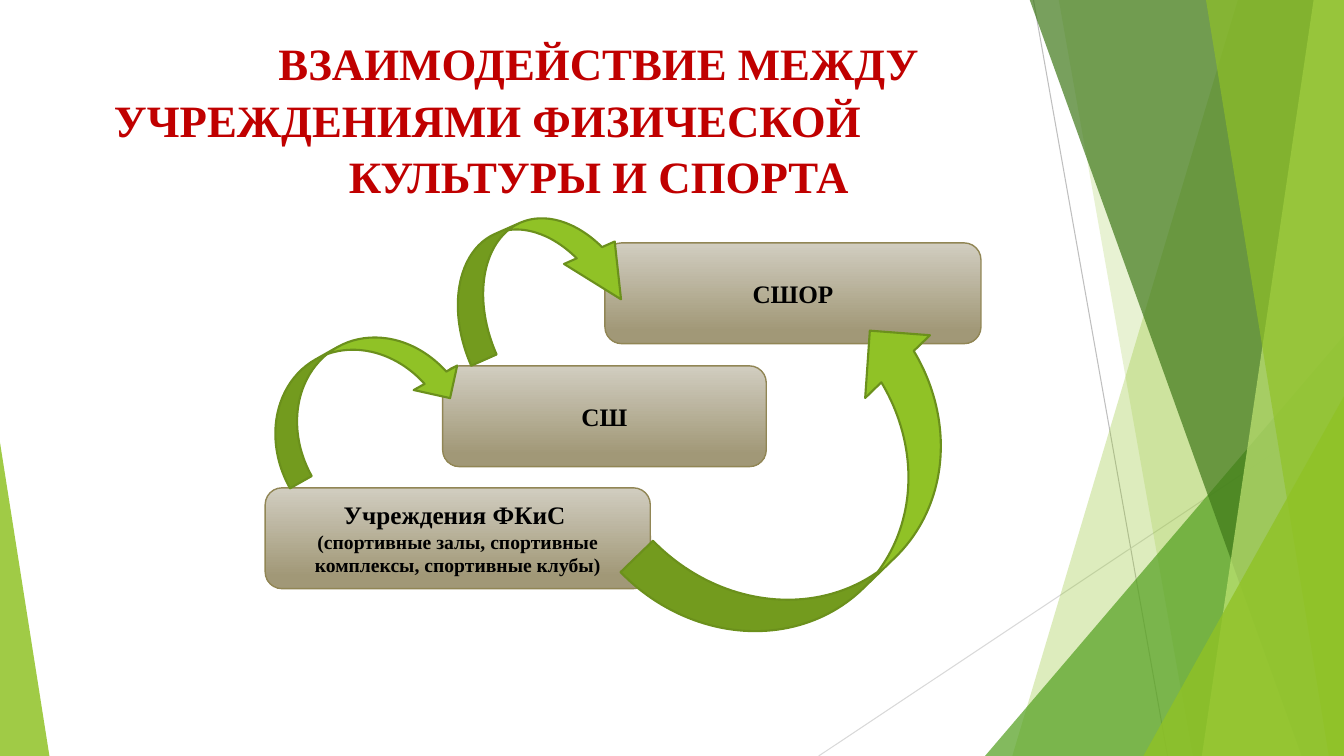
from lxml.etree import SubElement as Sub
from pptx import Presentation
from pptx.dml.color import RGBColor
from pptx.enum.shapes import MSO_CONNECTOR as Link, MSO_SHAPE as Kind
from pptx.enum.text import MSO_ANCHOR as Anchor, PP_ALIGN as Align
from pptx.oxml.ns import qn
from pptx.util import Inches, Pt

WIDE, HIGH, TOP = 13.33, 7.5, -0.01
FONT = "Times New Roman"
RED = RGBColor(0xC0, 0x00, 0x00)
BLACK = RGBColor(0x00, 0x00, 0x00)
LIME = RGBColor(0x90, 0xC2, 0x26)
GREEN = RGBColor(0x54, 0xA0, 0x21)
DARK = RGBColor(0x3F, 0x78, 0x19)
PALE = RGBColor(0xC0, 0xE4, 0x74)
OLIVE = RGBColor(0x6B, 0x90, 0x1C)
SAND = RGBColor(0xD1, 0xCD, 0xC0)
CLAY = RGBColor(0xA1, 0x98, 0x77)
BROWN = RGBColor(0x91, 0x86, 0x55)
GRAY = RGBColor(0xBF, 0xBF, 0xBF)
SILVER = RGBColor(0xD9, 0xD9, 0xD9)

TITLE = [
    ("ВЗАИМОДЕЙСТВИЕ МЕЖДУ", Align.CENTER, 0),
    ("УЧРЕЖДЕНИЯМИ ФИЗИЧЕСКОЙ", Align.LEFT, 0.29),
    ("КУЛЬТУРЫ И СПОРТА", Align.CENTER, 0),
]
LINES = [
    ((10.25, 0, 11.58, HIGH), GRAY),
    ((WIDE, 4.03, 8.12, HIGH), SILVER),
]
FACETS = [
    ("band", (12.28, 10.04), LIME, 30),
    ("band", (10.5, 11.83), LIME, 20),
    ("wedge", (9.77, 3.56, 4.17, 1), GREEN, 72),
    ("band", (10.21, 12.91), DARK, 70),
    ("band", (13.03, 11.92), PALE, 70),
    ("band", (11.96, 13.18), LIME, 65),
    ("wedge", (11.34, 1.99, 3.57, 1), LIME, 80),
    ("wedge", (0, 0.49, 3.11, 0), LIME, 85),
]
STEPS = [
    ((4.39, 3.63, 3.21, 1), [("СШ", 18)]),
    ((2.63, 4.84, 3.82, 1), [
        ("Учреждения ФКиС ", 18),
        ("(спортивные залы, спортивные комплексы, спортивные клубы)", 14),
    ]),
    ((6, 2.41, 3.73, 1), [("СШОР", 18)]),
]
ARROWS = [
    (Kind.CURVED_LEFT_ARROW, (3.04, 2.87, 0.99, 2.07), 240.6, ()),
    (Kind.CURVED_LEFT_ARROW, (4.77, 1.79, 1.1, 1.9), 246.1, (0.25, 0.5, 0.5)),
    (Kind.CURVED_RIGHT_ARROW, (7.28, 3.02, 1.79, 3.89), 225.9, ()),
]


def apply(item, form):
    for key, value in form.items():
        setattr(item, key, value)


def place(*nums):
    return [Inches(num) for num in nums]


def paint(shape, color, edge=None, width=1):
    shape.shadow.inherit = False
    if color is not None:
        shape.fill.solid()
        shape.fill.fore_color.rgb = color
    if edge is None:
        shape.line.fill.background()
    else:
        shape.line.color.rgb = edge
        shape.line.width = Pt(width)


def fade(shape, share):
    tone = shape._element.spPr.find(qn("a:solidFill"))[0]
    Sub(tone, qn("a:alpha")).set("val", str(share * 1000))


def write(para, text, size, color, align):
    para.alignment = align
    run = para.add_run()
    run.text = text
    apply(run.font, {"name": FONT, "size": Pt(size), "bold": True})
    run.font.color.rgb = color


def band(start, end):
    points = [(WIDE, TOP), (WIDE, HIGH), (end, HIGH)]
    path = shapes.build_freeform(*place(start, TOP))
    path.add_line_segments([place(*point) for point in points])
    return path.convert_to_shape()


def wedge(left, width, height, peak):
    box = place(left, HIGH - height, width, height)
    shape = shapes.add_shape(Kind.ISOSCELES_TRIANGLE, *box)
    shape.adjustments[0] = peak
    return shape


deck = Presentation()
apply(deck, {"slide_width": Inches(WIDE), "slide_height": Inches(HIGH)})
slide = deck.slides.add_slide(deck.slide_layouts[5])
shapes = slide.shapes

for ends, color in LINES:
    line = shapes.add_connector(Link.STRAIGHT, *place(*ends))
    line.line.color.rgb = color
    line.line.width = Pt(0.75)
    Sub(line._element.spPr, qn("a:effectLst"))

makers = {"band": band, "wedge": wedge}
for kind, dims, color, share in FACETS:
    facet = makers[kind](*dims)
    paint(facet, color)
    fade(facet, share)

for box, rows in STEPS:
    step = shapes.add_shape(Kind.ROUNDED_RECTANGLE, *place(*box))
    step.fill.gradient()
    step.fill.gradient_angle = 270
    for stop, (spot, color) in zip(step.fill.gradient_stops, [(0, SAND), (0.88, CLAY)]):
        stop.position = spot
        stop.color.rgb = color
    paint(step, None, BROWN)
    frame = step.text_frame
    apply(frame, {"word_wrap": True, "vertical_anchor": Anchor.MIDDLE})
    for num, (text, size) in enumerate(rows):
        para = frame.add_paragraph() if num else frame.paragraphs[0]
        write(para, text, size, BLACK, Align.CENTER)

for kind, box, turn, bends in ARROWS:
    arrow = shapes.add_shape(kind, *place(*box))
    arrow.rotation = turn
    for num, bend in enumerate(bends):
        arrow.adjustments[num] = bend
    paint(arrow, LIME, OLIVE, 1.5)

title = shapes.title
apply(title, dict(zip(("left", "top", "width", "height"), place(0.74, 0.28, 10.4, 1.72))))
frame = title.text_frame
apply(frame, {"word_wrap": True, "vertical_anchor": Anchor.TOP})
for num, (text, align, indent) in enumerate(TITLE):
    para = frame.add_paragraph() if num else frame.paragraphs[0]
    write(para, text, 32, RED, align)
    apply(para, {"line_spacing": 1.05, "space_before": Pt(0)})
    para._p.get_or_add_pPr().set("marL", str(Inches(indent)))
shapes._spTree.append(title._element)

deck.save("out.pptx")
